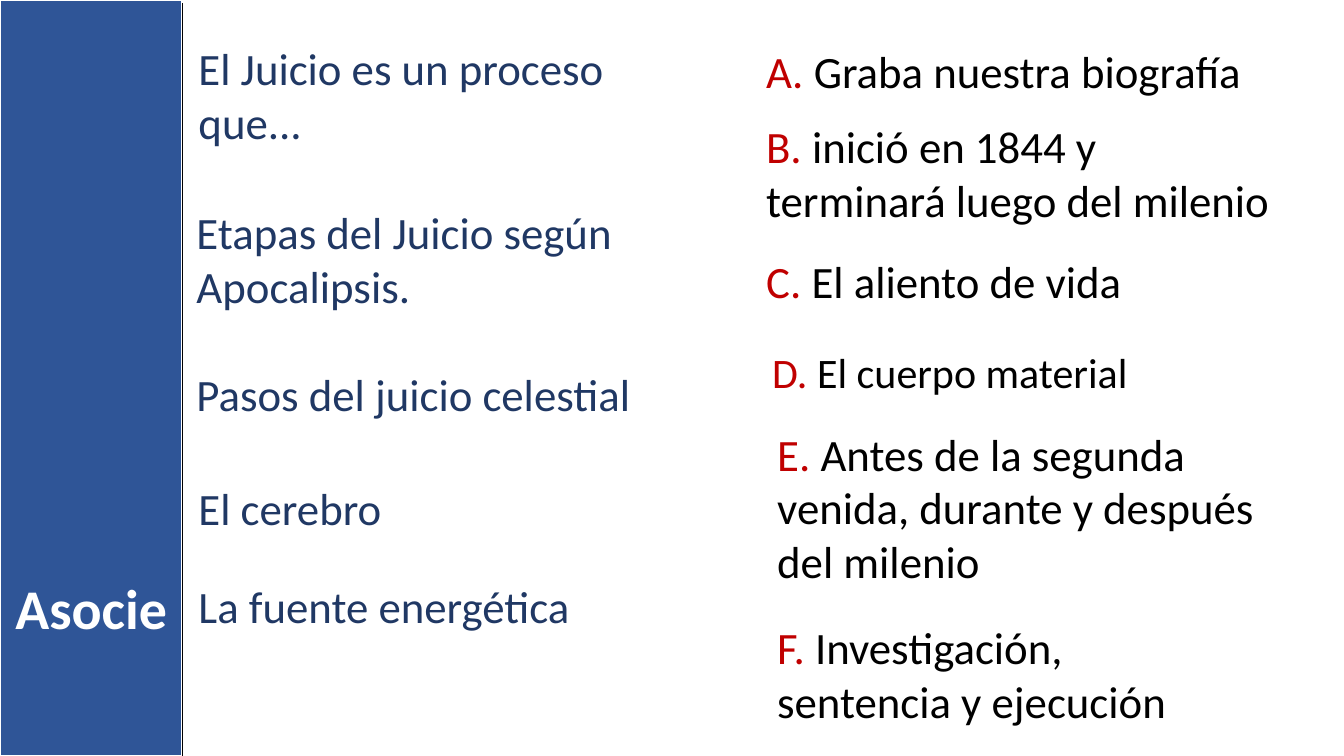
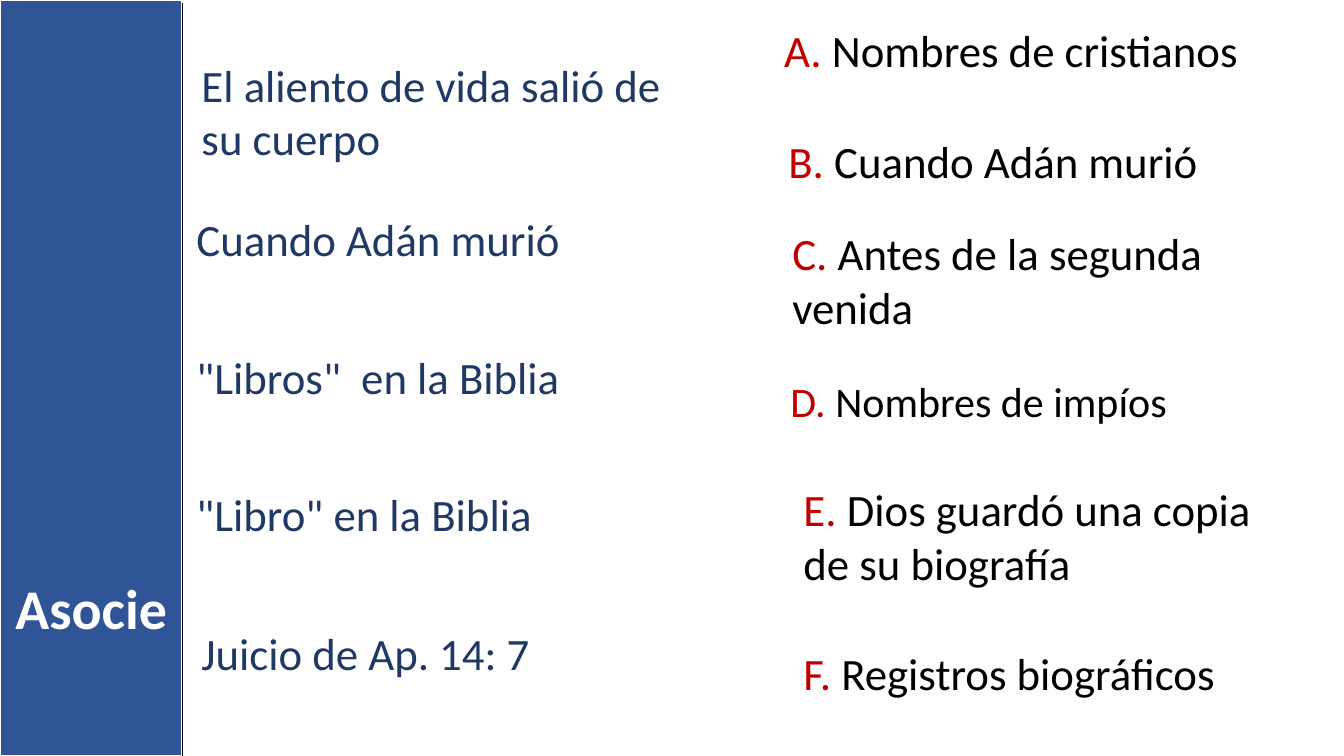
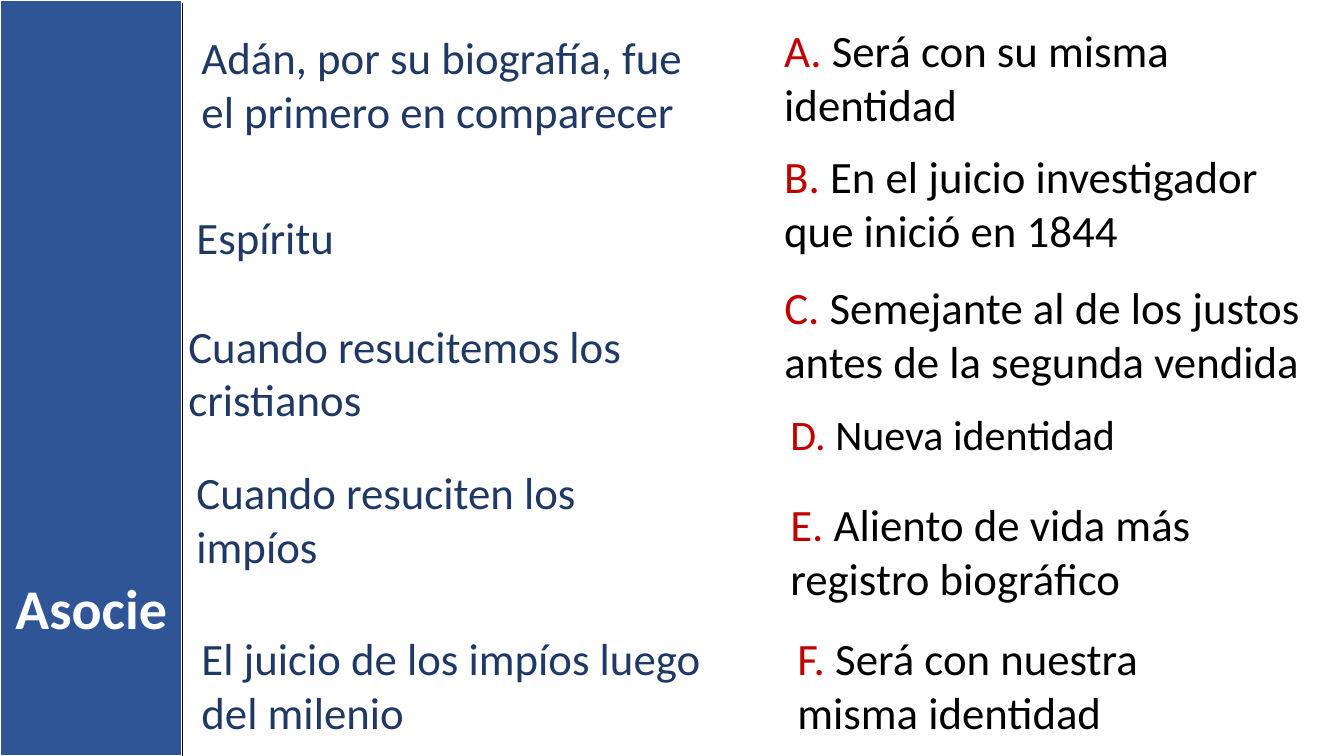
from dataclasses import dataclass
from lxml.etree import SubElement
from pptx import Presentation
from pptx.dml.color import RGBColor as RGB
from pptx.enum.shapes import MSO_CONNECTOR as Conn, MSO_SHAPE as Shape
from pptx.enum.text import MSO_ANCHOR as Anchor, MSO_AUTO_SIZE as Fit, PP_ALIGN as Align
from pptx.oxml.ns import qn
from pptx.util import Inches, Pt


@dataclass(frozen=True)
class Theme:
    font: str = "Calibri"
    band: RGB = RGB(0x2F, 0x55, 0x97)
    navy: RGB = RGB(0x20, 0x38, 0x64)
    red: RGB = RGB(0xC0, 0x00, 0x00)
    black: RGB = RGB(0x00, 0x00, 0x00)
    white: RGB = RGB(0xFF, 0xFF, 0xFF)
    title: int = 40
    body: int = 32
    small: int = 30


theme = Theme()
WIDE, HIGH, BAND = 13.33, 7.5, 1.81


def write(frame, text, size=theme.body, color=theme.black, bold=False):
    run = frame.paragraphs[0].add_run()
    run.text = text
    run.font.name = theme.font
    run.font.size = Pt(size)
    run.font.color.rgb = color
    run.font.bold = bold


def add_box(slide, left, top, width, lines, size=theme.body):
    high = 0.1 + lines * size * 0.017
    box = slide.shapes.add_textbox(Inches(left), Inches(top), Inches(width), Inches(high))
    box.text_frame.word_wrap = True
    box.text_frame.auto_size = Fit.SHAPE_TO_FIT_TEXT
    return box.text_frame


# left, top, width, lines, text
quiz = [
    (
        [
            (1.87, 0.36, 4.25, 2, "El Juicio es un proceso que..."),
            (1.85, 1.98, 4.81, 2, "Etapas del Juicio según Apocalipsis."),
            (1.85, 3.59, 5.1, 1, "Pasos del juicio celestial"),
            (1.87, 4.72, 4.94, 1, "El cerebro"),
            (1.87, 5.69, 4.78, 1, "La fuente energética"),
        ],
        [
            (7.5, 0.38, 5.04, 1, "Graba nuestra biografía"),
            (7.5, 1.13, 5.29, 2, "inició en 1844 y terminará luego del milenio"),
            (7.5, 2.47, 4.88, 1, "El aliento de vida"),
            (7.56, 3.39, 5.29, 1, "El cuerpo material"),
            (7.61, 4.18, 5.18, 3, "Antes de la segunda venida, durante y después del milenio"),
            (7.61, 6.1, 4.15, 2, "Investigación, sentencia y ejecución"),
        ],
    ),
    (
        [
            (1.9, 0.52, 4.89, 2, "El aliento de vida salió de su cuerpo"),
            (1.85, 2.05, 5.16, 1, "Cuando Adán murió"),
            (1.85, 3.42, 5.1, 1, '"Libros"  en la Biblia'),
            (1.85, 4.78, 4.94, 1, '"Libro" en la Biblia'),
            (1.9, 6.16, 5.16, 1, "Juicio de Ap. 14: 7"),
        ],
        [
            (7.68, 0.18, 5, 1, "Nombres de cristianos"),
            (7.72, 1.28, 4.68, 1, "Cuando Adán murió"),
            (7.76, 2.19, 4.73, 2, "Antes de la segunda venida"),
            (7.74, 3.68, 4.75, 1, "Nombres de impíos"),
            (7.87, 4.73, 4.91, 2, "Dios guardó una copia de su biografía"),
            (7.87, 6.36, 4.62, 1, "Registros biográficos"),
        ],
    ),
    (
        [
            (1.9, 0.25, 5.39, 2, "Adán, por su biografía, fue el primero en comparecer"),
            (1.85, 2.03, 5.16, 1, "Espíritu"),
            (1.77, 3.11, 5.1, 2, "Cuando resucitemos los cristianos"),
            (1.85, 4.56, 4.94, 2, "Cuando resuciten los impíos"),
            (1.9, 6.21, 5.16, 2, "El juicio de los impíos luego del milenio"),
        ],
        [
            (7.68, 0.18, 5, 2, "Será con su misma identidad"),
            (7.68, 1.43, 5.37, 2, "En el juicio investigador que inició en 1844"),
            (7.68, 2.73, 5.39, 2, "Semejante al de los justos antes de la segunda vendida"),
            (7.74, 4, 4.75, 1, "Nueva identidad"),
            (7.74, 4.88, 4.91, 2, "Aliento de vida más registro biográfico"),
            (7.81, 6.21, 4.62, 2, "Será con nuestra misma identidad"),
        ],
    ),
]

deck = Presentation()
deck.slide_width, deck.slide_height = Inches(WIDE), Inches(HIGH)

for clues, answers in quiz:
    slide = deck.slides.add_slide(deck.slide_layouts[5])
    title = slide.shapes.title

    band = slide.shapes.add_shape(Shape.RECTANGLE, 0, 0, Inches(BAND), Inches(HIGH))
    band.shadow.inherit = False
    band.fill.solid()
    band.fill.fore_color.rgb = theme.band
    band.line.color.rgb = theme.white
    band.line.width = Pt(1.5)
    title.element.addprevious(band.element)

    title.left, title.top = Inches(0), Inches(5.64)
    title.width, title.height = Inches(BAND), Inches(0.77)
    title.text_frame.auto_size = Fit.NONE
    title.text_frame.vertical_anchor = Anchor.TOP
    title.text_frame.paragraphs[0].alignment = Align.CENTER
    write(title.text_frame, "Asocie", size=theme.title, color=theme.white, bold=True)

    for *place, text in clues:
        write(add_box(slide, *place), text, color=theme.navy)

    for mark, (*place, text) in zip("ABCDEF", answers):
        size = theme.small if mark == "D" else theme.body
        frame = add_box(slide, *place, size=size)
        write(frame, f"{mark}. ", size=size, color=theme.red)
        write(frame, text, size=size)

    edge = slide.shapes.add_connector(
        Conn.STRAIGHT, Inches(BAND), Inches(0.03), Inches(BAND), Inches(HIGH)
    )
    edge.line.color.rgb = theme.black
    edge.line.width = Pt(1)
    SubElement(edge.element.spPr, qn("a:effectLst"))

deck.save("out.pptx")
